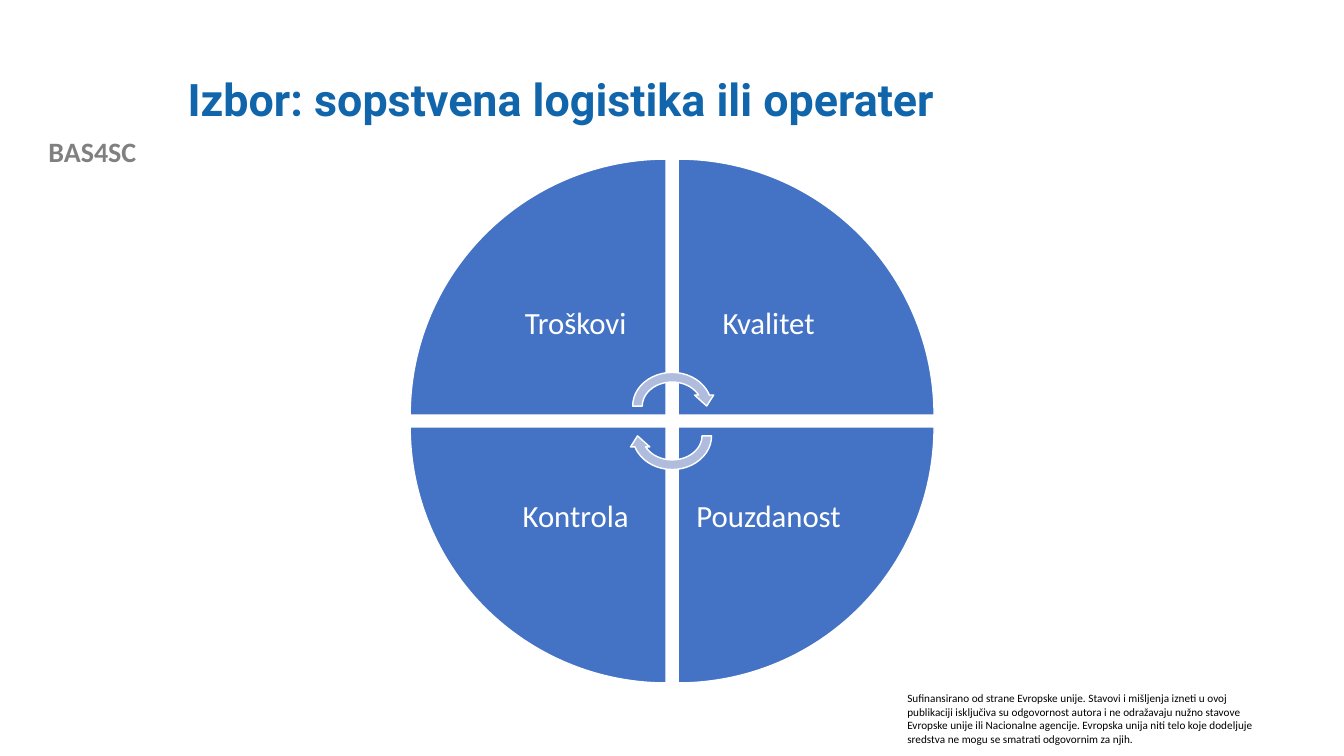
from pptx import Presentation
from pptx.dml.color import RGBColor
from pptx.enum.shapes import MSO_SHAPE
from pptx.enum.text import MSO_ANCHOR, MSO_AUTO_SIZE, PP_ALIGN
from pptx.util import Pt

WEDGE = MSO_SHAPE.PIE_WEDGE
ARROW = MSO_SHAPE.CIRCULAR_ARROW
MIDDLE, TOP = MSO_ANCHOR.MIDDLE, MSO_ANCHOR.TOP
LEFT, CENTER = PP_ALIGN.LEFT, PP_ALIGN.CENTER
FIXED = MSO_AUTO_SIZE.NONE

BLUE, PALE, WHITE = "4472C4", "B0BCDE", "FFFFFF"
TITLE, GREY, BLACK = "1065AB", "808080", "000000"
NOTE = (
    "Sufinansirano od strane Evropske unije. Stavovi i mišljenja izneti u ovoj "
    "publikaciji isključiva su odgovornost autora i ne odražavaju nužno stavove "
    "Evropske unije ili Nacionalne agencije. Evropska unija niti telo koje "
    "dodeljuje sredstva ne mogu se smatrati odgovornim za njih."
)
# Label, column, row; clockwise from the top left
PARTS = [("Troškovi", 0, 0), ("Kvalitet", 1, 0), ("Pouzdanost", 1, 1), ("Kontrola", 0, 1)]


def color(code):
    return RGBColor.from_string(code)


def place(box):
    return [Pt(v) for v in box]


def write(frame, text, size, ink, font="Calibri", bold=False,
          align=LEFT, anchor=TOP, space=1.0):
    frame.word_wrap = True
    frame.auto_size = FIXED
    frame.vertical_anchor = anchor
    para = frame.paragraphs[0]
    para.alignment = align
    para.line_spacing = space
    run = para.add_run()
    run.text = text
    run.font.size = Pt(size)
    run.font.name = font
    run.font.bold = bold
    run.font.color.rgb = color(ink)


def add_text(slide, box, text, size, ink, **style):
    frame = slide.shapes.add_textbox(*place(box)).text_frame
    write(frame, text, size, ink, **style)
    return frame


def add_form(slide, kind, box, fill, turn):
    form = slide.shapes.add_shape(kind, *place(box))
    form.shadow.inherit = False
    form.rotation = turn
    form.fill.solid()
    form.fill.fore_color.rgb = color(fill)
    form.line.color.rgb = color(WHITE)
    form.line.width = Pt(1)


def add_title(slide, box):
    head = slide.shapes.title
    head.left, head.top, head.width, head.height = place(box)
    write(head.text_frame, "Izbor: sopstvena logistika ili operater", 32, TITLE,
          font="Roboto", bold=True, anchor=MIDDLE, space=0.9)


def add_cycle(slide, box):
    left, top, width, height = box
    gap = 8.6
    side = (width - gap) / 2
    label = side / 2 ** 0.5
    inset = side - label

    # Quarters, each with its label against the inner corner
    for i, (text, col, row) in enumerate(PARTS):
        x = left + col * (side + gap)
        y = top + row * (side + gap)
        add_form(slide, WEDGE, (x, y, side, side), BLUE, 90 * i)
        spot = (x + inset * (1 - col), y + inset * (1 - row), label, label)
        frame = add_text(slide, spot, text, 22, WHITE,
                         align=CENTER, anchor=MIDDLE, space=0.9)
        frame.margin_left = frame.margin_right = Pt(12.3)
        frame.margin_top = frame.margin_bottom = Pt(12.3)

    # Two arrows turning about the centre
    wide, high, shift = 63.2, 55, 10.6
    x = left + (width - wide) / 2
    y = top + (height - high) / 2
    for turn, move in ((0, -shift), (180, shift)):
        add_form(slide, ARROW, (x, y + move, wide, high), PALE, turn)


def main():
    deck = Presentation()
    deck.slide_width, deck.slide_height = Pt(960), Pt(540)
    slide = deck.slides.add_slide(deck.slide_layouts[5])

    # Project name and funding note
    add_text(slide, (0, 92.2, 132, 31.5), "BAS4SC", 20, GREY, bold=True, align=CENTER)
    add_text(slide, (641, 490.5, 266.4, 46), NOTE, 8, BLACK)

    add_title(slide, (126.8, 28.8, 767.5, 87.8))
    add_cycle(slide, (293, 113.6, 374.2, 374.2))
    deck.save("out.pptx")


if __name__ == "__main__":
    main()
